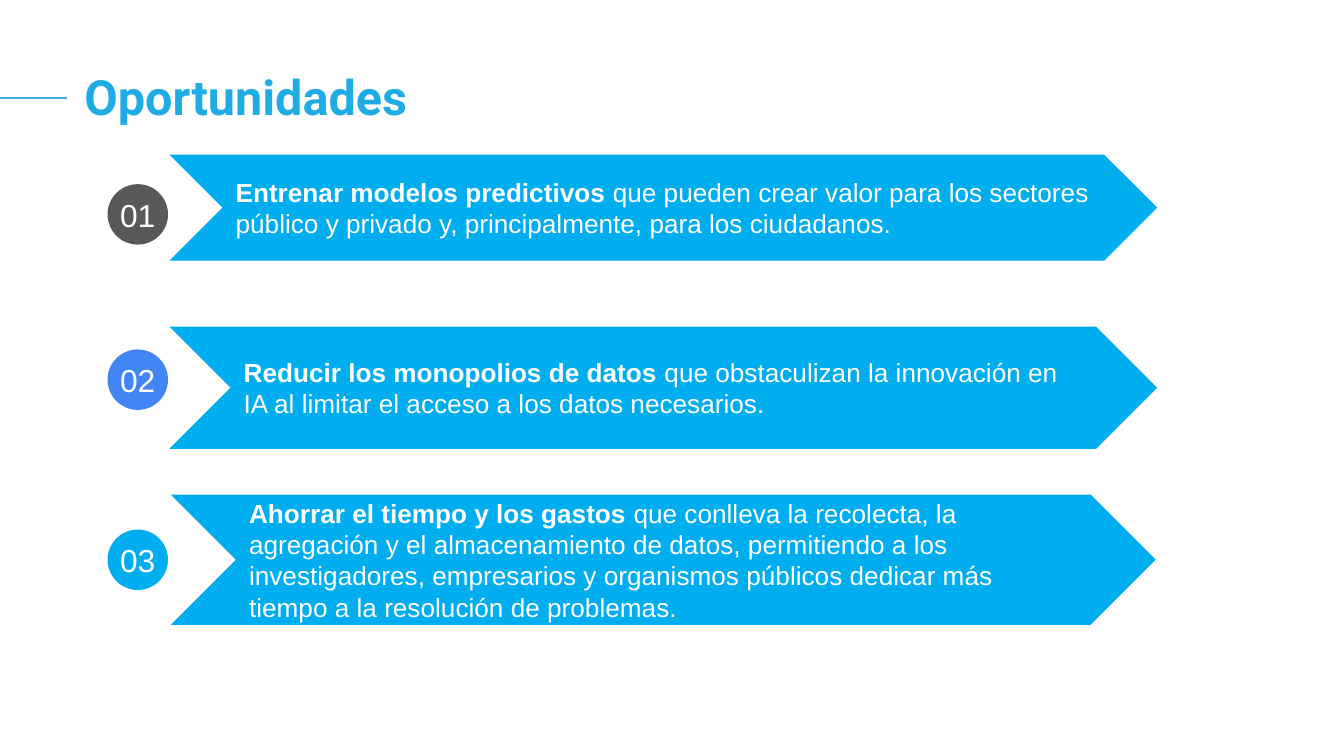
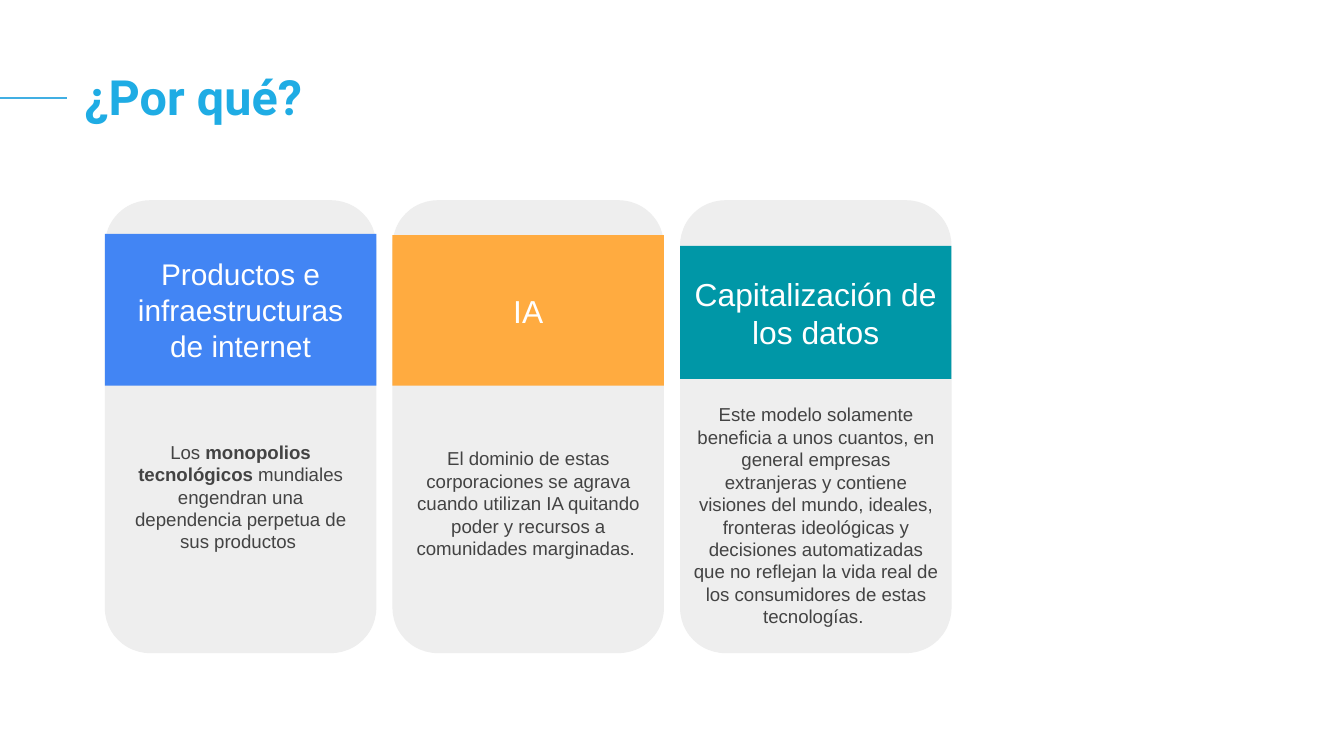
"""Builds two slides on data: the opportunities and the reasons."""
from lxml.etree import SubElement
from pptx import Presentation
from pptx.dml.color import RGBColor
from pptx.enum.shapes import MSO_CONNECTOR, MSO_SHAPE as Shape
from pptx.enum.text import MSO_ANCHOR, PP_ALIGN as Align
from pptx.oxml.ns import qn
from pptx.util import Inches, Pt

WHITE = RGBColor(0xFF, 0xFF, 0xFF)
TITLE_BLUE = RGBColor(0x1F, 0xAC, 0xE4)
RULE_BLUE = RGBColor(0x41, 0xAF, 0xE3)
SKY = RGBColor(0x00, 0xAE, 0xEF)
BLUE = RGBColor(0x42, 0x85, 0xF4)
ORANGE = RGBColor(0xFF, 0xAB, 0x40)
TEAL = RGBColor(0x00, 0x97, 0xA7)
GRAY = RGBColor(0x59, 0x59, 0x59)
CARD_GRAY = RGBColor(0xEE, 0xEE, 0xEE)
TEXT_GRAY = RGBColor(0x43, 0x43, 0x43)

OPPORTUNITIES_TITLE = "Oportunidades"
OPPORTUNITIES = [
    dict(color=GRAY, badge_top=1.37, arrow=(1.26, 1.15, 7.35, 0.79),
         runs=[("Entrenar modelos predictivos", True),
               (" que pueden crear valor para los sectores público y privado y, "
                "principalmente, para los ciudadanos.", False)]),
    dict(color=BLUE, badge_top=2.6, arrow=(1.26, 2.43, 7.35, 0.91),
         runs=[("Reducir los monopolios de datos", True),
               (" que obstaculizan la innovación en IA al limitar el acceso a los "
                "datos necesarios.", False)]),
    dict(color=SKY, badge_top=3.94, arrow=(1.27, 3.68, 7.33, 0.97),
         runs=[("Ahorrar el tiempo y los gastos", True),
               (" que conlleva la recolecta, la agregación y el almacenamiento de "
                "datos, permitiendo a los investigadores, empresarios y organismos "
                "públicos dedicar más tiempo a la resolución de problemas.", False)]),
]

REASONS_TITLE = "¿Por qué?"
REASONS = [
    dict(heading="Productos e infraestructuras de internet", size=16, color=BLUE,
         band=(1.74, 1.13), body=(2.52, 2.35), body_inset=0.09,
         runs=[("Los ", False), ("monopolios tecnológicos ", True),
               ("mundiales engendran una dependencia perpetua de sus productos ", False)]),
    dict(heading="IA", size=17, color=ORANGE,
         band=(1.75, 1.12), body=(2.62, 2.25), body_inset=0,
         runs=[("El dominio de estas corporaciones se agrava cuando utilizan IA "
                "quitando poder y recursos a comunidades marginadas. ", False)]),
    dict(heading="Capitalización de los datos", size=17, color=TEAL,
         band=(1.83, 0.99), body=(2.81, 2.05), body_inset=0,
         runs=[("Este modelo solamente beneficia a unos cuantos, en general empresas "
                "extranjeras y contiene visiones del mundo, ideales, fronteras "
                "ideológicas y decisiones automatizadas que no reflejan la vida real "
                "de los consumidores de estas tecnologías. ", False)]),
]

SLIDE_WIDTH = Inches(10)
SLIDE_HEIGHT = SLIDE_WIDTH * 9 // 16
BADGE_LEFT, BADGE_SIZE = 0.8, 0.45
CARD_LEFT, CARD_TOP, CARD_WIDTH, CARD_HEIGHT = 0.78, 1.49, 2.02, 3.37
CARD_STEP = 2.14


def write(holder, runs, size, color, align=Align.LEFT, font="Arial", insets=(0.1, 0.1)):
    frame = holder.text_frame
    frame.word_wrap = True
    frame.vertical_anchor = MSO_ANCHOR.MIDDLE
    frame.margin_left = frame.margin_right = Inches(insets[0])
    frame.margin_top = frame.margin_bottom = Inches(insets[1])
    paragraph = frame.paragraphs[0]
    paragraph.alignment = align
    paragraph.font.name = font
    paragraph.font.size = Pt(size)
    paragraph.font.color.rgb = color
    for words, bold in runs:
        run = paragraph.add_run()
        run.text = words
        run.font.bold = bold
    return paragraph


def add_filled(slide, preset, box, color):
    shape = slide.shapes.add_shape(preset, *map(Inches, box))
    shape.shadow.inherit = False
    shape.fill.solid()
    shape.fill.fore_color.rgb = color
    shape.line.fill.background()
    return shape


def add_text(slide, box, runs, size, color, **style):
    return write(slide.shapes.add_textbox(*map(Inches, box)), runs, size, color, **style)


def add_titled_slide(deck, title):
    slide = deck.slides.add_slide(deck.slide_layouts[6])
    rule = slide.shapes.add_connector(
        MSO_CONNECTOR.STRAIGHT, 0, Inches(0.73), Inches(0.5), Inches(0.73))
    rule.line.color.rgb = RULE_BLUE
    rule.line.width = Pt(1.5)
    SubElement(rule._element.spPr, qn("a:effectLst"))
    heading = add_text(slide, (0.53, 0.43, 8.62, 0.62), [(title, True)], 26, TITLE_BLUE,
                       font="Roboto", insets=(0.1, 0.05))
    heading.line_spacing = 0.9
    return slide


def build_opportunities(deck):
    slide = add_titled_slide(deck, OPPORTUNITIES_TITLE)
    for number, item in enumerate(OPPORTUNITIES, 1):
        badge = add_filled(slide, Shape.OVAL,
                           (BADGE_LEFT, item["badge_top"], BADGE_SIZE, BADGE_SIZE),
                           item["color"])
        write(badge, [(f"{number:02}", False)], 17, WHITE, Align.CENTER, insets=(0, 0.1))
        arrow = add_filled(slide, Shape.CHEVRON, item["arrow"], SKY)
        write(arrow, item["runs"], 14, WHITE)


def build_reasons(deck):
    slide = add_titled_slide(deck, REASONS_TITLE)
    for column, reason in enumerate(REASONS):
        left = CARD_LEFT + column * CARD_STEP
        add_filled(slide, Shape.ROUNDED_RECTANGLE,
                   (left, CARD_TOP, CARD_WIDTH, CARD_HEIGHT), CARD_GRAY)
        band_top, band_height = reason["band"]
        band = add_filled(slide, Shape.RECTANGLE,
                          (left, band_top, CARD_WIDTH, band_height), reason["color"])
        write(band, [(reason["heading"], False)], reason["size"], WHITE, Align.CENTER)
        body_top, body_height = reason["body"]
        inset = reason["body_inset"]
        add_text(slide, (left + inset, body_top, CARD_WIDTH - 2 * inset, body_height),
                 reason["runs"], 10, TEXT_GRAY, align=Align.CENTER)


def main():
    deck = Presentation()
    deck.slide_width, deck.slide_height = SLIDE_WIDTH, SLIDE_HEIGHT
    build_opportunities(deck)
    build_reasons(deck)
    deck.save("out.pptx")


if __name__ == "__main__":
    main()
